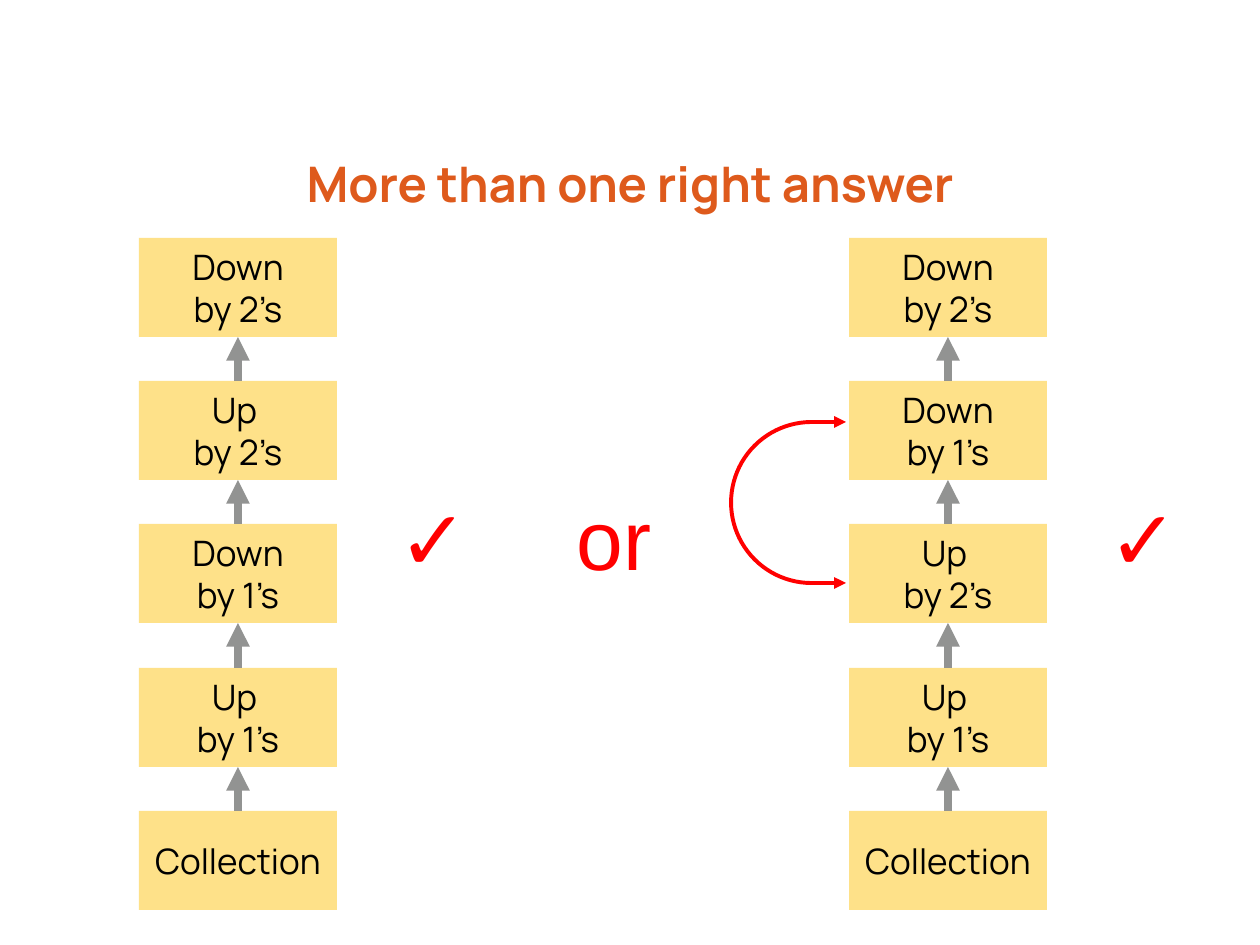
from lxml import etree
from pptx import Presentation
from pptx import util as u
from pptx.dml.color import RGBColor
from pptx.enum import shapes, text
from pptx.oxml.ns import qn

PX = 914400 / 126
COLORS = {"title": "DE5A1C", "box": "FEE189", "label": "000000",
          "arrow": "929392", "mark": "FF0000"}


def style(para, size, name, color, bold=False):
    font = para.font
    font.size, font.name, font.bold = u.Pt(size), name, bold
    font.color.rgb = RGBColor.from_string(COLORS[color])


def add_arrow(start, end, color, width):
    """Draw a straight line from start to end, with a triangle at its end."""
    points = [u.Emu(round(value * PX)) for value in (*start, *end)]
    arrow = page.shapes.add_connector(shapes.MSO_CONNECTOR.STRAIGHT, *points)
    arrow.line.color.rgb = RGBColor.from_string(COLORS[color])
    arrow.line.width = u.Pt(width)
    etree.SubElement(arrow.line._get_or_add_ln(), qn("a:tailEnd"), type="triangle")
    etree.SubElement(arrow._element.spPr, qn("a:effectLst"))


deck = Presentation()
deck.slide_width, deck.slide_height = round(1260 * PX), round(945 * PX)
page = deck.slides.add_slide(deck.slide_layouts[5])

# Title
title = page.shapes.title
title.left, title.top, title.width, title.height = (
    round(value * PX) for value in (50, 107, 1160, 105))
frame = title.text_frame
frame.text = "More than one right answer"
frame.vertical_anchor = text.MSO_ANCHOR.BOTTOM
frame.margin_left = frame.margin_right = frame.margin_top = frame.margin_bottom = 0
frame.paragraphs[0].alignment = text.PP_ALIGN.CENTER
style(frame.paragraphs[0], 28, "Manrope", "title", True)

# Two stacks of steps, read from the top down
BOX_WIDTH, BOX_HEIGHT = 198, 99
TOPS = [238 + round(row * 573 / 4) for row in range(5)]
stacks = {
    139: ["Down\vby 2’s", "Up \vby 2’s", "Down\vby 1’s", "Up \vby 1’s", "Collection"],
    849: ["Down\vby 2’s", "Down\vby 1’s", "Up \vby 2’s", "Up \vby 1’s", "Collection"],
}
for left, labels in stacks.items():
    for top, label in zip(TOPS, labels):
        box = page.shapes.add_shape(
            shapes.MSO_SHAPE.RECTANGLE,
            *(round(value * PX) for value in (left, top, BOX_WIDTH, BOX_HEIGHT)))
        box.shadow.inherit = False
        box.fill.solid()
        box.fill.fore_color.rgb = RGBColor.from_string(COLORS["box"])
        box.line.fill.background()
        box.text_frame.text = label
        box.text_frame.vertical_anchor = text.MSO_ANCHOR.MIDDLE
        para = box.text_frame.paragraphs[0]
        para.alignment = text.PP_ALIGN.CENTER
        style(para, 20, "Manrope", "label")
    center = left + BOX_WIDTH // 2
    for upper, lower in zip(TOPS, TOPS[1:]):
        add_arrow((center, lower), (center, upper + BOX_HEIGHT), "arrow", 4.5)

# Check marks and the word between the stacks
for mark, left, width in [("✓", 386, 100), ("or", 564, 125), ("✓", 1096, 100)]:
    box = page.shapes.add_textbox(
        *(round(value * PX) for value in (left, 480, width, 115)))
    box.text_frame.word_wrap = True
    box.text_frame.text = mark
    style(box.text_frame.paragraphs[0], 48, "Arial", "mark")

# Swap loop beside the right stack
LOOP_TOP, LOOP_SIZE = 422, 161
loop = page.shapes.add_shape(
    shapes.MSO_SHAPE.ARC,
    *(round(value * PX) for value in (731, LOOP_TOP, LOOP_SIZE, LOOP_SIZE)))
loop.adjustments[0], loop.adjustments[1] = 162, 53.52
loop.rotation = 180
loop.shadow.inherit = False
loop.fill.background()
loop.line.color.rgb = RGBColor.from_string(COLORS["mark"])
loop.line.width = u.Pt(2.25)
for y in (LOOP_TOP, LOOP_TOP + LOOP_SIZE):
    add_arrow((808, y), (846, y), "mark", 2.25)

deck.save("out.pptx")
